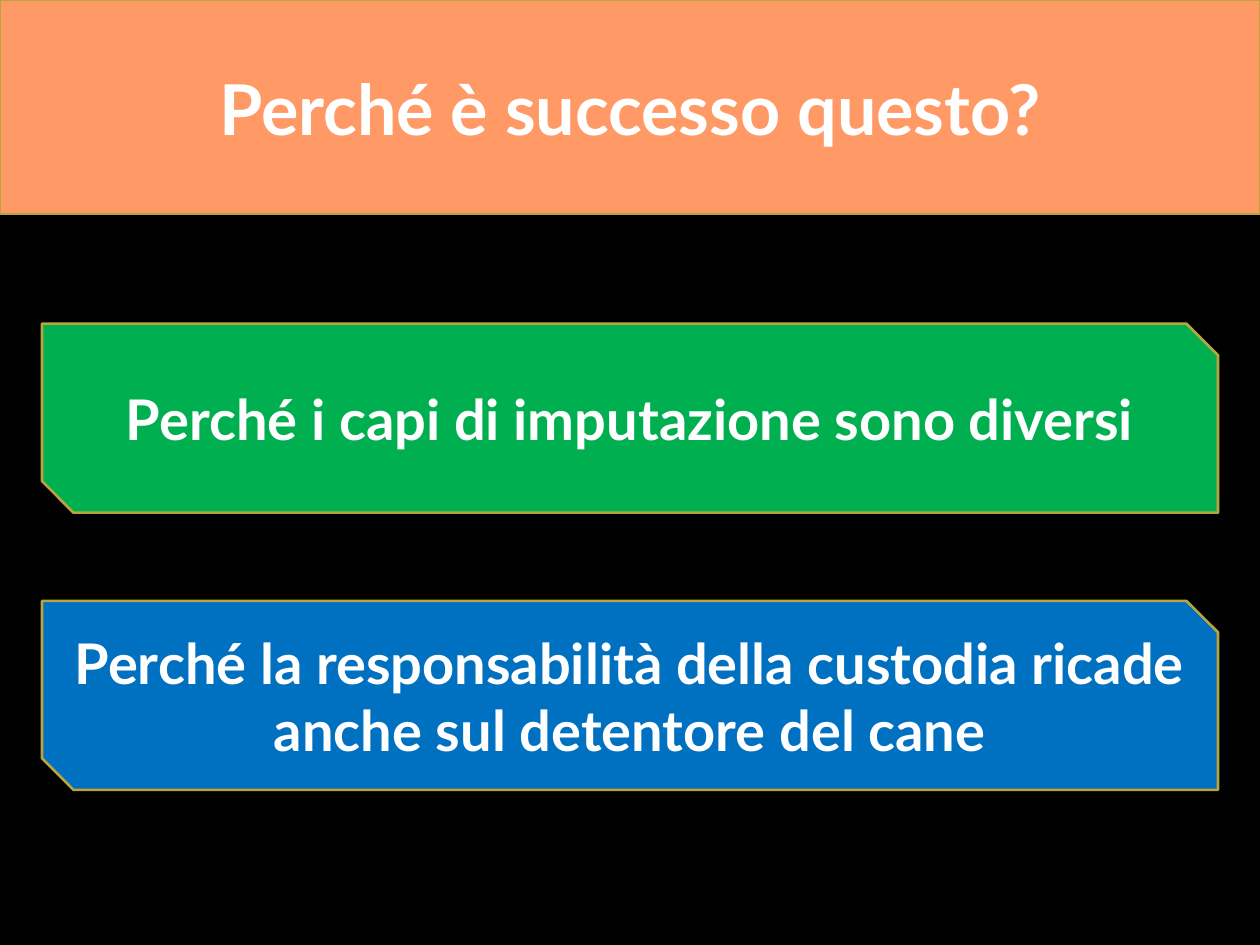
from dataclasses import dataclass

from pptx import Presentation
from pptx.dml.color import RGBColor
from pptx.enum.shapes import MSO_SHAPE as Shape
from pptx.enum.text import MSO_ANCHOR, MSO_AUTO_SIZE, PP_ALIGN
from pptx.util import Pt


@dataclass(frozen=True)
class Theme:
    font: str = "Lato"
    title_size: int = 40
    answer_size: int = 32
    text: str = "FFFFFF"
    backdrop: str = "000000"
    banner: str = "FF9966"
    border: str = "BAA53D"
    green: str = "00B050"
    blue: str = "0070C0"


THEME = Theme()
WIDTH, HEIGHT = 720, 540
BANNER_HEIGHT = 122.4
ANSWER_LEFT, ANSWER_TOP, ANSWER_HEIGHT, ANSWER_GAP = 24, 185, 108, 50.4
ANSWERS = (
    ("Perché i capi di imputazione sono diversi", THEME.green),
    ("Perché la responsabilità della custodia ricade anche sul detentore del cane",
     THEME.blue),
)


def apply_format(target, values):
    for name, value in values.items():
        setattr(target, name, value)


def paint(shape, fill, line, line_width):
    shape.fill.solid()
    shape.fill.fore_color.rgb = RGBColor.from_string(fill)
    shape.line.color.rgb = RGBColor.from_string(line)
    shape.line.width = Pt(line_width)


def write(shape, text, size):
    """Put one bold, centred paragraph in the shape."""
    frame = shape.text_frame
    apply_format(frame, {
        "word_wrap": True,
        "auto_size": MSO_AUTO_SIZE.NONE,
        "vertical_anchor": MSO_ANCHOR.MIDDLE,
    })
    para = frame.paragraphs[0]
    para.alignment = PP_ALIGN.CENTER
    span = para.add_run()
    span.text = text
    apply_format(span.font, {"name": THEME.font, "size": Pt(size), "bold": True})
    span.font.color.rgb = RGBColor.from_string(THEME.text)


def add_box(page, kind, left, top, width, height):
    box = page.shapes.add_shape(kind, Pt(left), Pt(top), Pt(width), Pt(height))
    box.shadow.inherit = False
    return box


def add_backdrop(page):
    """Cover the page with a dark rectangle behind the title."""
    backdrop = add_box(page, Shape.RECTANGLE, 0, 0, WIDTH, HEIGHT)
    paint(backdrop, THEME.backdrop, THEME.backdrop, 0.75)
    page.shapes.title.element.addprevious(backdrop.element)


def format_title(title, text):
    apply_format(title, {
        "left": Pt(0), "top": Pt(0),
        "width": Pt(WIDTH), "height": Pt(BANNER_HEIGHT),
    })
    paint(title, THEME.banner, THEME.border, 1.5)
    write(title, text, THEME.title_size)


def add_answer(page, row, text, fill):
    top = ANSWER_TOP + row * (ANSWER_HEIGHT + ANSWER_GAP)
    box = add_box(page, Shape.SNIP_2_DIAG_RECTANGLE, ANSWER_LEFT, top,
                  WIDTH - 2 * ANSWER_LEFT, ANSWER_HEIGHT)
    paint(box, fill, THEME.border, 1.5)
    write(box, text, THEME.answer_size)


def main():
    deck = Presentation()
    apply_format(deck, {"slide_width": Pt(WIDTH), "slide_height": Pt(HEIGHT)})
    page = deck.slides.add_slide(deck.slide_layouts.get_by_name("Title Only"))
    add_backdrop(page)
    format_title(page.shapes.title, "Perché è successo questo?")
    for row, (text, fill) in enumerate(ANSWERS):
        add_answer(page, row, text, fill)
    deck.save("out.pptx")


if __name__ == "__main__":
    main()
